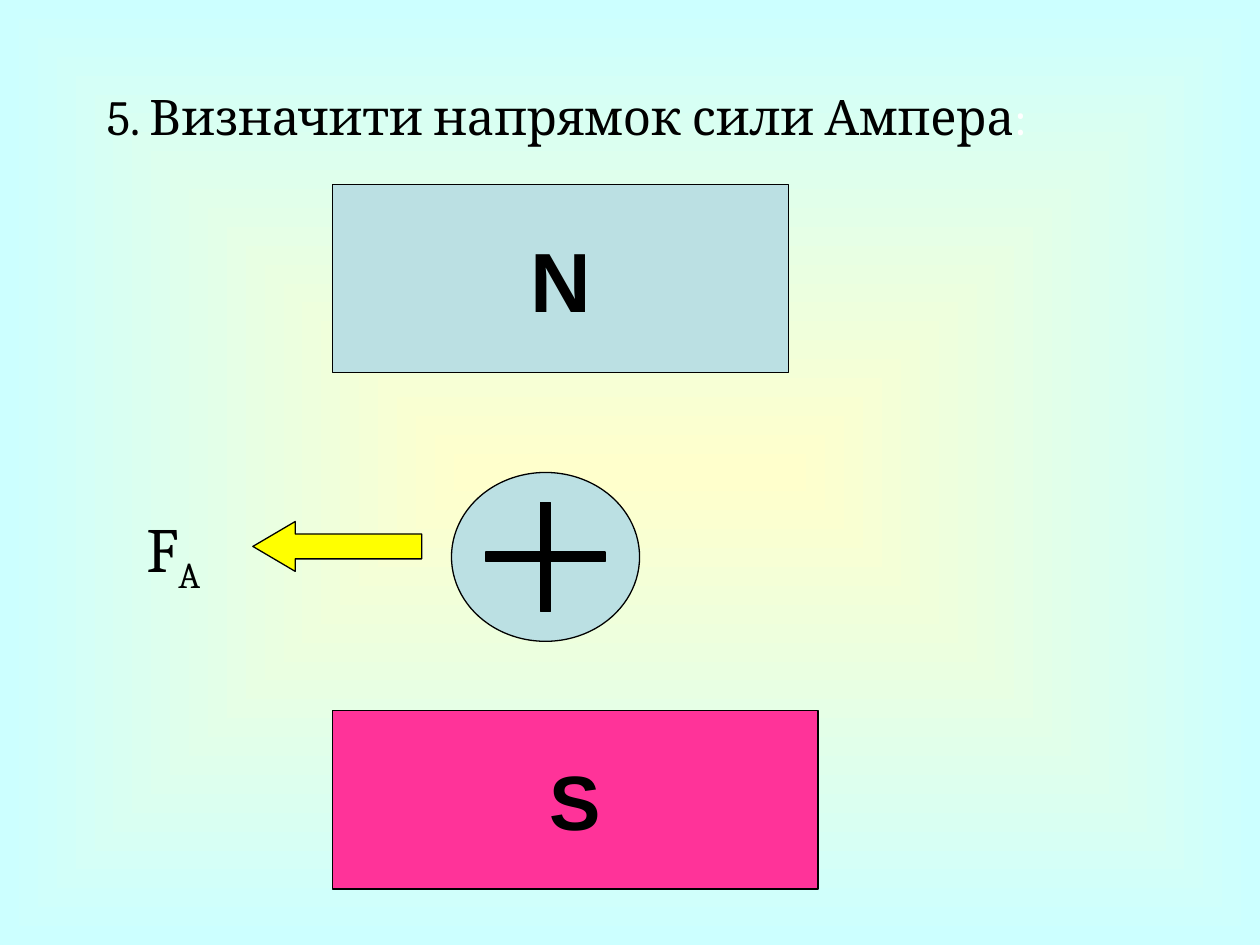
from lxml import etree
from pptx import Presentation
from pptx.dml.color import RGBColor
from pptx.enum.shapes import MSO_SHAPE as Shape
from pptx.enum.text import MSO_ANCHOR as Anchor, PP_ALIGN as Align
from pptx.oxml.ns import qn
from pptx.util import Pt

BLACK, WHITE = "000000", "FFFFFF"
PALE_BLUE, PINK, YELLOW = "BBE0E3", "FF3399", "FFFF00"


def rgb(hex_color):
    return RGBColor.from_string(hex_color)


def add_run(paragraph, text, size, font, color=BLACK, bold=False):
    run = paragraph.add_run()
    run.text = text
    run.font.size, run.font.name, run.font.bold = Pt(size), font, bold
    run.font.color.rgb = rgb(color)
    return run


def add_figure(slide, kind, box, fill):
    figure = slide.shapes.add_shape(kind, *map(Pt, box))
    figure.shadow.inherit = False
    figure.fill.solid()
    figure.fill.fore_color.rgb = rgb(fill)
    figure.line.color.rgb = rgb(BLACK)
    figure.line.width = Pt(0.75)
    return figure


def paint_background(slide, center, edge):
    fill = slide.background.fill
    fill.gradient()
    for stop, color in zip(fill.gradient_stops, (center, edge)):
        stop.color.rgb = rgb(color)
    # Rectangular gradient that spreads from the middle
    gradient = slide.background._cSld.find(".//" + qn("a:gradFill"))
    linear = gradient.find(qn("a:lin"))
    spread = etree.Element(qn("a:path"), {"path": "shape"})
    etree.SubElement(spread, qn("a:fillToRect"),
                     {side: "50000" for side in "ltrb"})
    gradient.replace(linear, spread)


def place_title(slide, box):
    title = slide.shapes.title
    title.left, title.top, title.width, title.height = map(Pt, box)
    frame = title.text_frame
    frame.vertical_anchor = Anchor.MIDDLE
    heading = frame.paragraphs[0]
    heading.alignment = Align.CENTER
    add_run(heading, "5. Визначити напрямок сили Ампера", 28, "Cambria")
    add_run(heading, ":", 28, "Cambria", WHITE)


def add_pole(slide, box, letter, size, fill):
    pole = add_figure(slide, Shape.RECTANGLE, box, fill)
    frame = pole.text_frame
    frame.word_wrap = False
    frame.vertical_anchor = Anchor.MIDDLE
    label = frame.paragraphs[0]
    label.alignment = Align.CENTER
    add_run(label, letter, size, "Arial", bold=True)


def add_conductor(slide, box):
    """Wire cross-section whose current flows away from the viewer."""
    left, top, width, height = box
    add_figure(slide, Shape.OVAL, box, PALE_BLUE)
    # Two bars of the cross
    center_x, center_y = left + width / 2, top + height / 2
    for bar_width, bar_height in ((68, 5.5), (5.5, 62)):
        bar = (center_x - bar_width / 2, center_y - bar_height / 2,
               bar_width, bar_height)
        add_figure(slide, Shape.RECTANGLE, bar, BLACK)


def add_force(slide, box):
    left, top, width, height = box
    # Arrow on the right of the region
    arrow_width, arrow_height = 96.5, 28.5
    arrow = add_figure(slide, Shape.LEFT_ARROW,
                       (left + width - arrow_width, top + 10.5,
                        arrow_width, arrow_height), YELLOW)
    arrow.adjustments[0], arrow.adjustments[1] = 0.5, 0.85
    # Force symbol with its subscript
    symbol = slide.shapes.add_textbox(Pt(left), Pt(top), Pt(57), Pt(height))
    symbol.text_frame.word_wrap = True
    label = symbol.text_frame.paragraphs[0]
    add_run(label, "F", 36, "Cambria")
    subscript = add_run(label, "A", 36, "Cambria")
    subscript.font._element.set("baseline", "-25000")


def main():
    deck = Presentation()
    deck.slide_width, deck.slide_height = Pt(720), Pt(540)
    slide = deck.slides.add_slide(deck.slide_layouts[5])
    paint_background(slide, "FFFFCC", "CCFFFF")
    place_title(slide, (0, 21.5, 648, 90))
    add_pole(slide, (190, 105.5, 260.5, 107.5), "N", 48, PALE_BLUE)
    add_pole(slide, (190, 406, 277.5, 102), "S", 44, PINK)
    add_conductor(slide, (258, 270, 107.5, 96.5))
    add_force(slide, (76.5, 287.5, 164.5, 50.5))
    deck.save("out.pptx")


if __name__ == "__main__":
    main()
